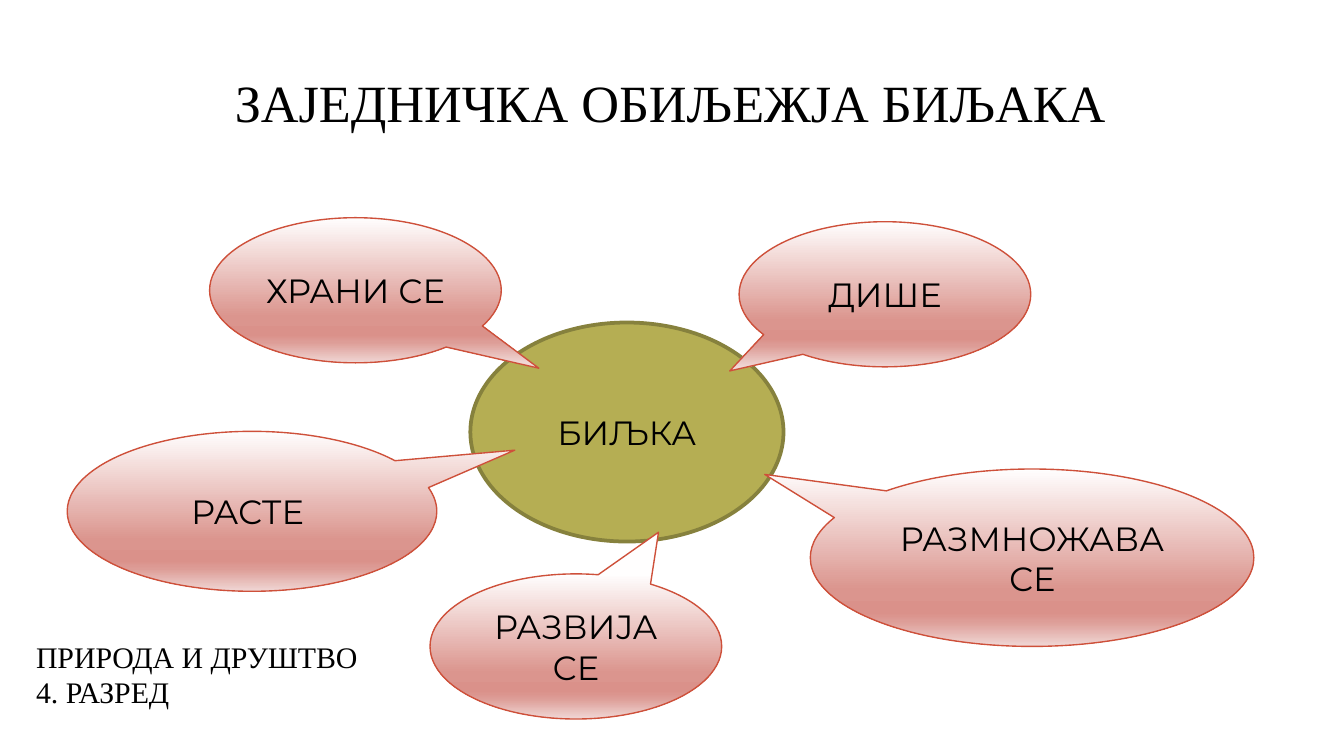
from dataclasses import dataclass

from lxml import etree
from pptx import Presentation
from pptx import util as u
from pptx.dml.color import RGBColor
from pptx.enum import shapes, text
from pptx.oxml.ns import qn


@dataclass(frozen=True)
class Theme:
    serif: str = "Times New Roman"
    sans: str = "Montserrat"
    title_size: int = 28
    label_size: int = 18
    note_size: int = 16
    ink: str = "000000"
    plant_fill: str = "B5AE53"
    plant_line: str = "86813D"
    bubble_line: str = "CE503A"
    bubble_stops: tuple = ((0, "FFFEFE"), (68, "DB958E"), (81, "DA918A"),
                           (86, "DD9D97"), (100, "F0D7D5"))


THEME = Theme()
WIDTH = 10
HEIGHT = WIDTH * 9 / 16

TITLE = "ЗАЈЕДНИЧКА ОБИЉЕЖЈА БИЉАКА"
TITLE_FRAME = (0.47, 0.33, 9.03, 0.85)
PLANT = "БИЉКА"
PLANT_FRAME = (3.5, 2.4, 2.33, 1.63)
NOTE = ("ПРИРОДА И ДРУШТВО", "4. РАЗРЕД")
NOTE_FRAME = (0.17, 4.7, 2.67, 0.64)

SMALL = (2.17, 1.08)
# label, left and top, size, point on the plant where the tail ends
TRAITS = [
    ("ДИШЕ", (5.5, 1.65), SMALL, (5.43, 2.76)),
    ("РАЗМНОЖАВА СЕ", (6.03, 3.49), (3.3, 1.32), (5.69, 3.53)),
    ("ХРАНИ СЕ", (1.56, 1.62), SMALL, (4.01, 2.74)),
    ("РАСТЕ ", (0.5, 3.21), (2.75, 1.19), (3.83, 3.35)),
    ("РАЗВИЈА СЕ", (3.2, 4.27), SMALL, (4.9, 3.96)),
]


def inches(frame):
    return [u.Inches(length) for length in frame]


def write(shape, lines, font, size, align, anchor):
    frame = shape.text_frame
    frame.text = "\n".join(lines)
    frame.word_wrap = True
    frame.vertical_anchor = anchor
    for para in frame.paragraphs:
        para.alignment = align
        for span in para.runs:
            span.font.name = font
            span.font.size = u.Pt(size)
            span.font.color.rgb = RGBColor.from_string(THEME.ink)


def add_label(page, kind, frame, label, line, weight):
    shape = page.shapes.add_shape(kind, *inches(frame))
    shape.shadow.inherit = False
    shape.line.color.rgb = RGBColor.from_string(line)
    shape.line.width = u.Pt(weight)
    write(shape, [label], THEME.sans, THEME.label_size,
          text.PP_ALIGN.CENTER, text.MSO_ANCHOR.MIDDLE)
    return shape


def fill_downward(shape, stops):
    """Fill with a gradient running from top to bottom through all stops."""
    shape.fill.gradient()
    shape.fill.gradient_angle = 270
    stop_list = next(shape.element.spPr.iter(qn("a:gsLst")))
    for old in list(stop_list):
        stop_list.remove(old)
    for percent, color in stops:
        stop = etree.SubElement(stop_list, qn("a:gs"), pos=str(percent * 1000))
        etree.SubElement(stop, qn("a:srgbClr"), val=color)


def add_trait(page, label, corner, size, tip):
    bubble = add_label(page, shapes.MSO_SHAPE.OVAL_CALLOUT, corner + size,
                       label, THEME.bubble_line, 0.75)
    fill_downward(bubble, THEME.bubble_stops)
    # The tail is given as a share of the size, measured from the centre.
    for axis in range(2):
        bubble.adjustments[axis] = (tip[axis] - corner[axis]) / size[axis] - 0.5


def main():
    deck = Presentation()
    deck.slide_width, deck.slide_height = inches((WIDTH, HEIGHT))
    page = deck.slides.add_slide(deck.slide_layouts[5])

    title = page.shapes.title
    title.left, title.top, title.width, title.height = inches(TITLE_FRAME)
    write(title, [TITLE], THEME.serif, THEME.title_size,
          text.PP_ALIGN.CENTER, text.MSO_ANCHOR.MIDDLE)

    plant = add_label(page, shapes.MSO_SHAPE.OVAL, PLANT_FRAME, PLANT,
                      THEME.plant_line, 2)
    plant.fill.solid()
    plant.fill.fore_color.rgb = RGBColor.from_string(THEME.plant_fill)

    for trait in TRAITS:
        add_trait(page, *trait)

    note = page.shapes.add_textbox(*inches(NOTE_FRAME))
    write(note, NOTE, THEME.serif, THEME.note_size,
          text.PP_ALIGN.LEFT, text.MSO_ANCHOR.TOP)
    note.text_frame.auto_size = text.MSO_AUTO_SIZE.SHAPE_TO_FIT_TEXT

    deck.save("out.pptx")


if __name__ == "__main__":
    main()
